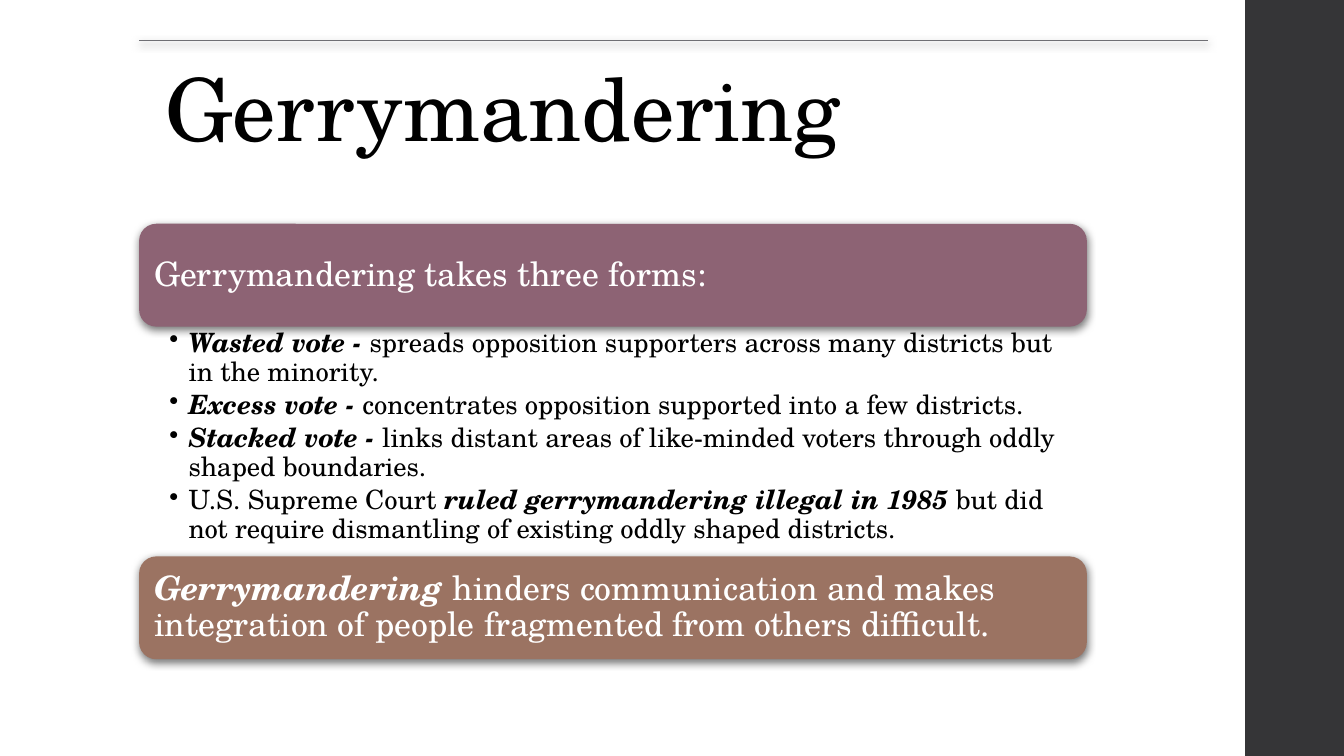
"""Build the Gerrymandering slide."""
from dataclasses import dataclass

from lxml import etree
from pptx import Presentation
from pptx.dml.color import RGBColor
from pptx.enum.shapes import MSO_CONNECTOR, MSO_SHAPE
from pptx.enum.text import MSO_ANCHOR, PP_ALIGN
from pptx.oxml.ns import qn
from pptx.shapes.autoshape import Shape
from pptx.slide import Slide
from pptx.text.text import TextFrame
from pptx.util import Inches, Pt

RECTANGLE = MSO_SHAPE.RECTANGLE
ROUNDED = MSO_SHAPE.ROUNDED_RECTANGLE
STRAIGHT = MSO_CONNECTOR.STRAIGHT
TOP, MIDDLE = MSO_ANCHOR.TOP, MSO_ANCHOR.MIDDLE
LEFT_ALIGN = PP_ALIGN.LEFT


@dataclass(frozen=True)
class Theme:
    font: str = "TeX Gyre Schola"
    black: str = "000000"
    white: str = "FFFFFF"
    sidebar: str = "353537"
    rule: str = "6F6F74"
    plum: str = "8D6374"
    brown: str = "9B7362"
    title_size: float = 62
    banner_size: float = 24
    bullet_size: float = 19
    bullet_gap: float = 3.25


@dataclass(frozen=True)
class Area:
    left: float
    top: float
    width: float
    height: float

    def lengths(self) -> list[Inches]:
        return [Inches(n) for n in (self.left, self.top, self.width, self.height)]


@dataclass(frozen=True)
class Span:
    text: str
    strong: bool = False


@dataclass(frozen=True)
class Banner:
    top: float
    fill: str
    spans: list[Span]


THEME = Theme()
SLIDE_WIDTH, SLIDE_HEIGHT = 13.33, 7.5
LEFT, RULE_TOP, RULE_WIDTH = 1.38, 0.4, 10.6
BODY_WIDTH, BANNER_HEIGHT = 9.4, 1.02
BULLET_INDENT = 0.19

BANNERS = [
    Banner(2.22, THEME.plum, [Span("Gerrymandering takes three forms:")]),
    Banner(5.52, THEME.brown, [
        Span("Gerrymandering", True),
        Span(" hinders communication and makes integration of people "
             "fragmented from others difficult."),
    ]),
]
BULLETS = [
    [Span("Wasted vote - ", True),
     Span("spreads opposition supporters across many districts but in the minority.")],
    [Span("Excess vote - ", True),
     Span("concentrates opposition supported into a few districts.")],
    [Span("Stacked vote - ", True),
     Span("links distant areas of like-minded voters through oddly shaped boundaries.")],
    [Span("U.S. Supreme Court "),
     Span("ruled gerrymandering illegal in 1985 ", True),
     Span("but did not require dismantling of existing oddly shaped districts.")],
]


def write_text(frame: TextFrame, paragraphs: list[list[Span]], *, size: float,
               color: str, insets: tuple[float, float, float, float],
               anchor: MSO_ANCHOR = TOP, gap: float = 0, bullet: str = "") -> None:
    frame.word_wrap = True
    frame.vertical_anchor = anchor
    (frame.margin_left, frame.margin_top,
     frame.margin_right, frame.margin_bottom) = map(Inches, insets)
    for index, spans in enumerate(paragraphs):
        para = frame.add_paragraph() if index else frame.paragraphs[0]
        para.alignment = LEFT_ALIGN
        para.line_spacing = 0.9
        para.space_after = Pt(gap)
        if bullet:
            properties = para._p.get_or_add_pPr()
            properties.set("marL", str(Inches(BULLET_INDENT)))
            properties.set("indent", str(-Inches(BULLET_INDENT)))
            etree.SubElement(properties, qn("a:buChar"), char=bullet)
        for span in spans:
            run = para.add_run()
            run.text = span.text
            run.font.name = THEME.font
            run.font.size = Pt(size)
            run.font.bold = run.font.italic = span.strong
            run.font.color.rgb = RGBColor.from_string(color)


def add_shadow(properties: etree._Element) -> None:
    effects = properties.find(qn("a:effectLst"))
    if effects is None:
        effects = etree.SubElement(properties, qn("a:effectLst"))
    shadow = etree.SubElement(
        effects, qn("a:outerShdw"), blurRad=str(Pt(6)), dist=str(Pt(2)),
        dir=str(90 * 60000), algn="ctr", rotWithShape="0")
    color = etree.SubElement(shadow, qn("a:srgbClr"), val=THEME.black)
    etree.SubElement(color, qn("a:alpha"), val="55000")


def add_block(page: Slide, kind: MSO_SHAPE, area: Area, fill: str) -> Shape:
    block = page.shapes.add_shape(kind, *area.lengths())
    block.fill.solid()
    block.fill.fore_color.rgb = RGBColor.from_string(fill)
    block.line.fill.background()
    block.shadow.inherit = False
    return block


def add_rule(page: Slide) -> None:
    rule = page.shapes.add_connector(
        STRAIGHT, Inches(LEFT), Inches(RULE_TOP),
        Inches(LEFT + RULE_WIDTH), Inches(RULE_TOP))
    rule.line.color.rgb = RGBColor.from_string(THEME.rule)
    rule.line.width = Pt(0.75)
    add_shadow(rule._element.spPr)


def add_banner(page: Slide, banner: Banner) -> None:
    area = Area(LEFT, banner.top, BODY_WIDTH, BANNER_HEIGHT)
    block = add_block(page, ROUNDED, area, banner.fill)
    add_shadow(block._element.spPr)
    write_text(block.text_frame, [banner.spans], size=THEME.banner_size,
               color=THEME.white, insets=(0.1, 0.1, 0.1, 0.1), anchor=MIDDLE)


def main() -> None:
    deck = Presentation()
    deck.slide_width, deck.slide_height = Inches(SLIDE_WIDTH), Inches(SLIDE_HEIGHT)
    page = deck.slides.add_slide(deck.slide_layouts[6])

    add_block(page, RECTANGLE, Area(12.35, 0, 0.98, SLIDE_HEIGHT), THEME.sidebar)
    add_rule(page)
    title = page.shapes.add_textbox(*Area(LEFT, RULE_TOP, RULE_WIDTH, 1.45).lengths())
    write_text(title.text_frame, [[Span("Gerrymandering")]], size=THEME.title_size,
               color=THEME.black, insets=(0.26, 0.26, 0.26, 0.26))

    for banner in BANNERS:
        add_banner(page, banner)
    first, last = BANNERS
    body_top = first.top + BANNER_HEIGHT
    body = Area(LEFT, body_top, BODY_WIDTH, last.top - body_top)
    box = page.shapes.add_textbox(*body.lengths())
    write_text(box.text_frame, BULLETS, size=THEME.bullet_size, color=THEME.black,
               insets=(0.3, 0.03, 0.19, 0.03), gap=THEME.bullet_gap, bullet="•")
    deck.save("out.pptx")


if __name__ == "__main__":
    main()
